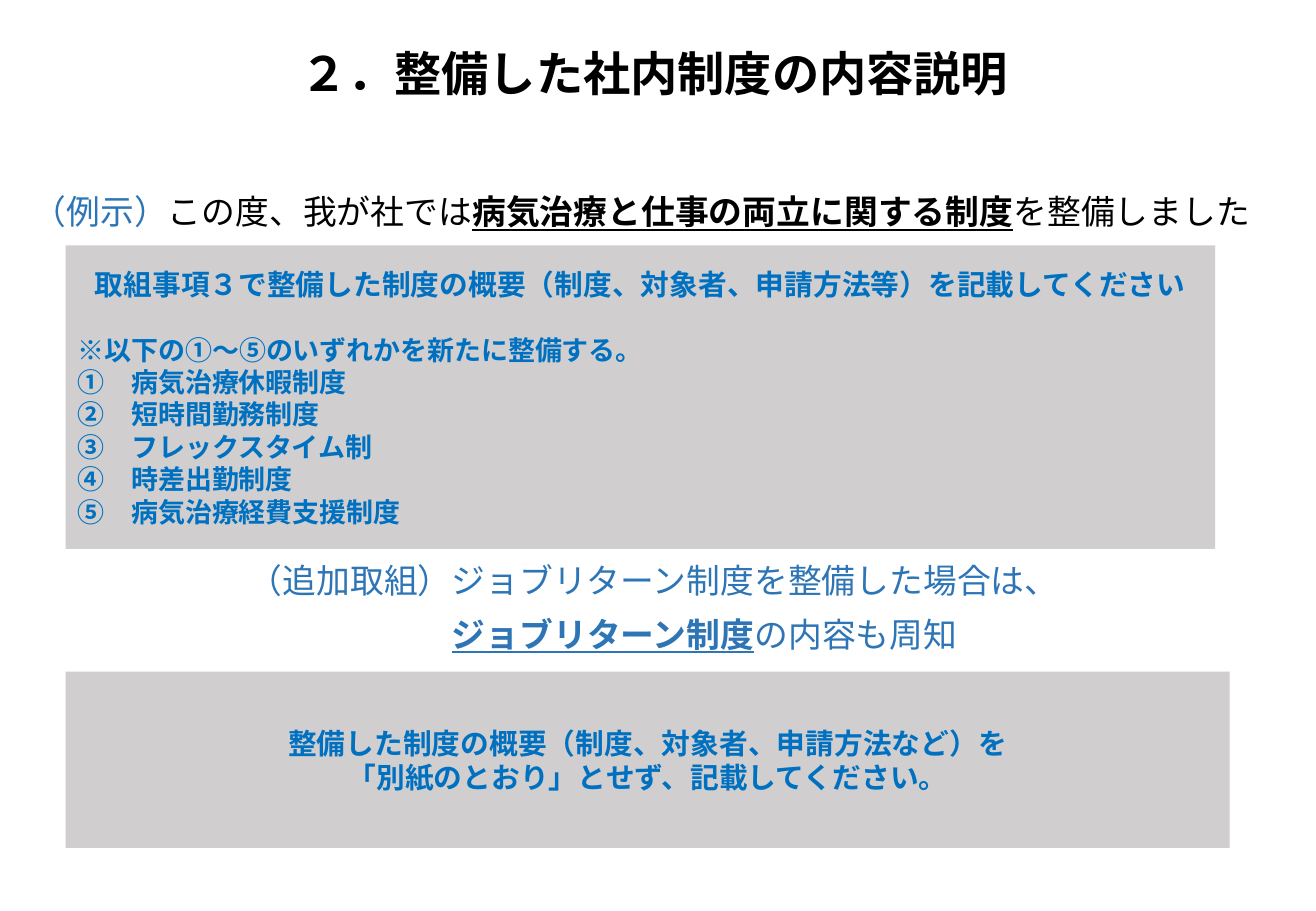
"""Build the slide that explains a company's new support systems."""
from pptx import Presentation
from pptx import util as u
from pptx.dml.color import RGBColor
from pptx.enum import lang, shapes, text

BLACK, BLUE, STEEL, GREY = "000000", "0070C0", "2E75B6", "D0CECE"
LEFT, MID = text.PP_ALIGN.LEFT, text.PP_ALIGN.CENTER
SYSTEMS = ["①　病気治療休暇制度", "②　短時間勤務制度", "③　フレックスタイム制",
           "④　時差出勤制度", "⑤　病気治療経費支援制度"]


def paint(part, color):
    part.rgb = RGBColor.from_string(color)


def area(*box):
    return [u.Inches(side) for side in box]


def style(para, size, face, color, bold=False, align=LEFT):
    font = para.font
    font.size, font.name, font.bold = u.Pt(size), face, bold
    font.language_id = lang.MSO_LANGUAGE_ID.JAPANESE
    paint(font.color, color)
    para.alignment = align


def write(frame, *runs):
    """Add a paragraph of (text, font settings) runs, using the empty first one."""
    para = frame.paragraphs[0]
    if para.runs:
        para = frame.add_paragraph()
    for words, look in runs:
        run = para.add_run()
        run.text = words
        for name, value in look.items():
            if name == "color":
                paint(run.font.color, value)
            else:
                setattr(run.font, name, value)
    return para


def head(slide, words):
    title = slide.shapes.title
    title.left, title.top, title.width, title.height = area(2.37, 0.36, 6.09, 0.53)
    frame = title.text_frame
    frame.word_wrap = True
    frame.auto_size = text.MSO_AUTO_SIZE.NONE
    frame.vertical_anchor = text.MSO_ANCHOR.MIDDLE
    para = write(frame, (words, {}))
    style(para, 28, "Arial", BLACK, True)
    para.line_spacing = 0.9


def label(slide, box, face, lines, inset=0):
    frame = slide.shapes.add_textbox(*area(*box)).text_frame
    frame.word_wrap = True
    for row, runs in enumerate(lines):
        para = write(frame, *runs)
        style(para, 20, face, STEEL)
        para.line_spacing, para.space_before = 0.9, u.Pt(10)
        if row:
            para._p.get_or_add_pPr().set("marL", str(u.Inches(inset)))


def panel(slide, box):
    rect = slide.shapes.add_shape(shapes.MSO_SHAPE.RECTANGLE, *area(*box))
    rect.shadow.inherit = False
    rect.fill.solid()
    paint(rect.fill.fore_color, GREY)
    rect.line.fill.background()
    frame = rect.text_frame
    frame.word_wrap = True
    frame.vertical_anchor = text.MSO_ANCHOR.MIDDLE
    return frame


def main():
    deck = Presentation()
    deck.slide_width, deck.slide_height = area(10.83, 7.5)
    slide = deck.slides.add_slide(deck.slide_layouts[5])
    strong = {"bold": True, "underline": True}

    head(slide, "２．整備した社内制度の内容説明")
    label(slide, (0.17, 1.56, 10.58, 0.41), "Arial", [
        [("（例示）", {}), ("この度、我が社では", {"color": BLACK}),
         ("病気治療と仕事の両立に関する制度", {"color": BLACK, **strong}),
         ("を整備しました", {"color": BLACK})]])

    frame = panel(slide, (0.54, 2.02, 9.46, 2.5))
    para = write(frame, ("取組事項３で整備した制度の概要（制度、対象者、申請方法等）を記載してください", {}))
    style(para, 17, "Calibri", BLUE, True, MID)
    para = write(frame, ("※以下の", {}), ("➀～⑤", {"name": "Arial"}),
                 ("のいずれかを新たに整備する。", {}))
    style(para, 16, "Calibri", BLUE, True)
    para.space_before = u.Pt(19)
    for words in SYSTEMS:
        style(write(frame, (words, {})), 16, "Arial", BLUE, True)

    label(slide, (1.95, 4.6, 6.93, 0.85), "Calibri", [
        [("（追加取組）ジョブリターン制度を整備した場合は、", {})],
        [("ジョブリターン制度", strong), ("の内容も周知", {})]], 1.67)

    frame = panel(slide, (0.54, 5.53, 9.58, 1.45))
    for words in ("整備した制度の概要（制度、対象者、申請方法など）を",
                  "「別紙のとおり」とせず、記載してください。"):
        style(write(frame, (words, {})), 17, "Calibri", BLUE, True, MID)
    deck.save("out.pptx")


if __name__ == "__main__":
    main()
